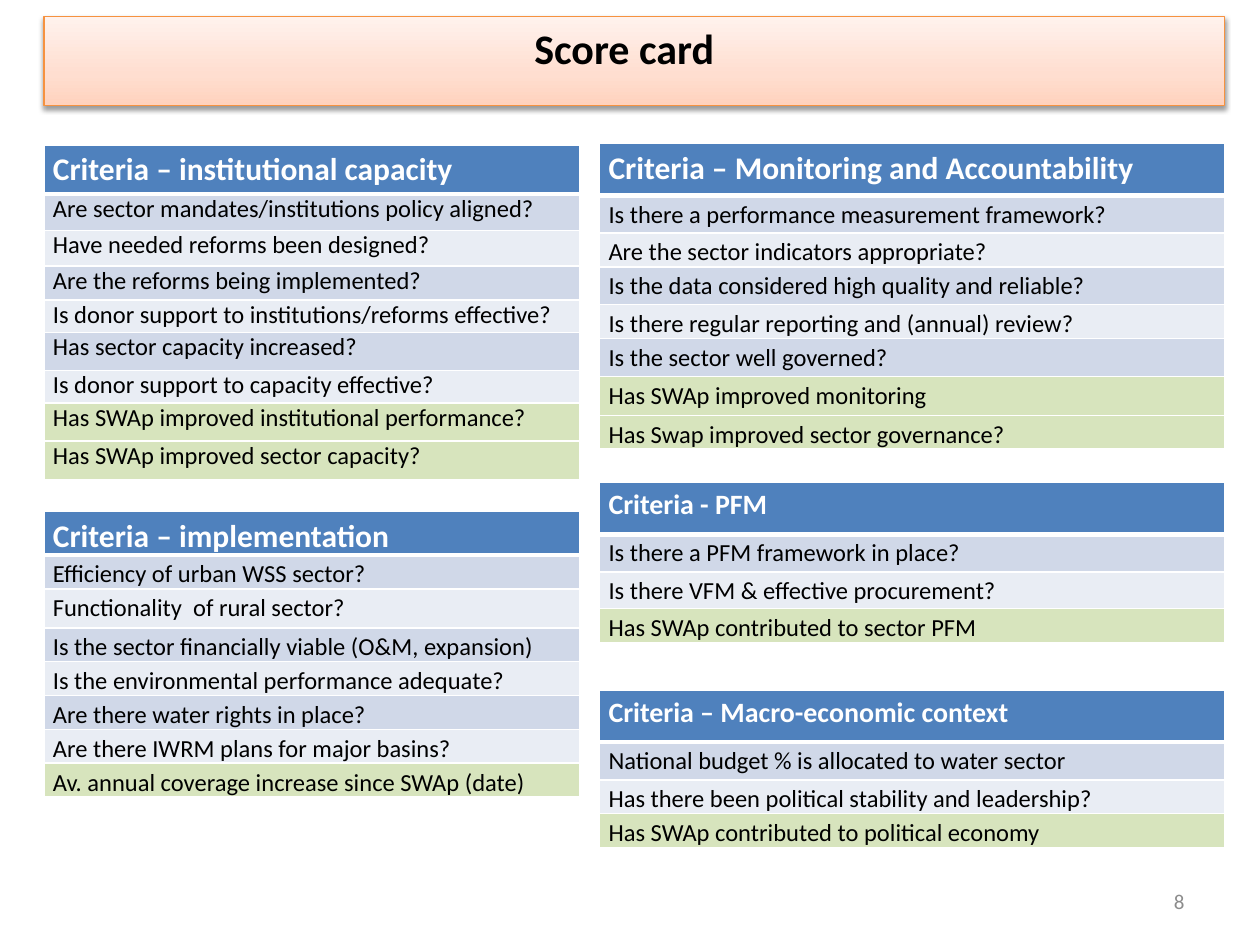
"""Build the sector score card slide."""
import dataclasses

import pptx
import pptx.dml.color
import pptx.enum.shapes
import pptx.enum.text
import pptx.oxml
import pptx.oxml.ns
import pptx.util

Inches = pptx.util.Inches


@dataclasses.dataclass(frozen=True)
class Theme:
    font: str = "Calibri"
    black: str = "000000"
    white: str = "FFFFFF"
    grey: str = "8C8C8C"
    header: str = "4F81BD"
    bands: tuple = ("D0D8E8", "E9EDF4")
    outcome: str = "D7E4BD"
    banner_line: str = "F69240"
    banner_stops: tuple = ((0, "FFD2BD"), (35, "FFDED0"), (100, "FFF2ED"))
    title_size: int = 24
    body_size: int = 14
    number_size: int = 12


@dataclasses.dataclass(frozen=True)
class Card:
    left: float
    top: float
    width: float
    heights: tuple
    heading: str
    questions: tuple
    outcomes: tuple
    heading_size: int = 18
    spacing: float = 1.15


THEME = Theme()
LEFT_COLUMN = (0.35, 4.25)
RIGHT_COLUMN = (4.76, 4.96)

CARDS = (
    Card(
        LEFT_COLUMN[0], 1.15, LEFT_COLUMN[1],
        (0.39, 0.29, 0.28, 0.27, 0.26, 0.3, 0.26, 0.3, 0.31),
        "Criteria – institutional capacity",
        ("Are sector mandates/institutions policy aligned?",
         "Have needed reforms been designed?",
         "Are the reforms being implemented?",
         "Is donor support to institutions/reforms effective?",
         "Has sector capacity increased?",
         "Is donor support to capacity effective?"),
        ("Has SWAp improved institutional performance?",
         "Has SWAp improved sector capacity?"),
        spacing=1.0,
    ),
    Card(
        RIGHT_COLUMN[0], 1.14, RIGHT_COLUMN[1],
        (0.41, 0.3, 0.24, 0.3, 0.24, 0.3, 0.31, 0.24),
        "Criteria – Monitoring and Accountability",
        ("Is there a performance measurement framework?",
         "Are the sector indicators appropriate?",
         "Is the data considered high quality and reliable?",
         "Is there regular reporting and (annual) review?",
         "Is the sector well governed?"),
        ("Has SWAp improved monitoring",
         "Has Swap improved sector governance?"),
    ),
    Card(
        LEFT_COLUMN[0], 4.06, LEFT_COLUMN[1],
        (0.33, 0.26, 0.31) + (0.26,) * 5,
        "Criteria – implementation",
        ("Efficiency of urban WSS sector?",
         "Functionality  of rural sector?",
         "Is the sector financially viable (O&M, expansion)",
         "Is the environmental performance adequate?",
         "Are there water rights in place?",
         "Are there IWRM plans for major basins?"),
        ("Av. annual coverage increase since SWAp (date)",),
    ),
    Card(
        RIGHT_COLUMN[0], 3.83, RIGHT_COLUMN[1], (0.41, 0.3, 0.29, 0.26),
        "Criteria - PFM",
        ("Is there a PFM framework in place?",
         "Is there VFM & effective procurement?"),
        ("Has SWAp contributed to sector PFM",),
        heading_size=16,
    ),
    Card(
        RIGHT_COLUMN[0], 5.48, RIGHT_COLUMN[1], (0.41, 0.3, 0.25, 0.24),
        "Criteria – Macro-economic context",
        ("National budget % is allocated to water sector",
         "Has there been political stability and leadership?"),
        ("Has SWAp contributed to political economy",),
        heading_size=16,
    ),
)


def rgb(color):
    return pptx.dml.color.RGBColor.from_string(color)


def parse_drawing(tag, attributes, content):
    namespace = pptx.oxml.ns.nsdecls("a")
    return pptx.oxml.parse_xml(f"<a:{tag} {namespace} {attributes}>{content}</a:{tag}>")


def add_run(paragraph, text, size, color, bold=False):
    run = paragraph.add_run()
    run.text = text
    run.font.name = THEME.font
    run.font.size = pptx.util.Pt(size)
    run.font.bold = bold
    run.font.color.rgb = rgb(color)


def add_banner(slide, text):
    shape = slide.shapes.add_shape(
        pptx.enum.shapes.MSO_SHAPE.RECTANGLE,
        Inches(0.35), Inches(0.13), Inches(9.37), Inches(0.71))
    shape.fill.gradient()
    shape.fill.gradient_angle = 90
    stops = shape._element.spPr.find(".//" + pptx.oxml.ns.qn("a:gsLst"))
    for stop in list(stops):
        stops.remove(stop)
    for position, color in THEME.banner_stops:
        stops.append(parse_drawing("gs", f'pos="{position * 1000}"', f'<a:srgbClr val="{color}"/>'))
    shape.line.color.rgb = rgb(THEME.banner_line)
    shape.line.width = pptx.util.Pt(0.75)
    shape.shadow.inherit = False
    effects = shape._element.spPr.find(pptx.oxml.ns.qn("a:effectLst"))
    effects.append(parse_drawing(
        "outerShdw", 'blurRad="39370" dist="20320" dir="5400000" rotWithShape="0"',
        f'<a:srgbClr val="{THEME.black}"><a:alpha val="38000"/></a:srgbClr>'))
    frame = shape.text_frame
    frame.word_wrap = True
    frame.vertical_anchor = pptx.enum.text.MSO_ANCHOR.TOP
    frame.margin_right = Inches(0.26)
    paragraph = frame.paragraphs[0]
    paragraph.alignment = pptx.enum.text.PP_ALIGN.CENTER
    add_run(paragraph, text, THEME.title_size, THEME.black, bold=True)


def set_borders(cell, top=1, bottom=1):
    properties = cell._tc.get_or_add_tcPr()
    sides = (("lnL", 1), ("lnR", 1), ("lnT", top), ("lnB", bottom))
    for index, (tag, points) in enumerate(sides):
        properties.insert(index, parse_drawing(
            tag, f'w="{pptx.util.Pt(points)}"',
            f'<a:solidFill><a:srgbClr val="{THEME.white}"/></a:solidFill>'))


def fill_cell(cell, text, fill, size, color, spacing, bold=False):
    cell.fill.solid()
    cell.fill.fore_color.rgb = rgb(fill)
    cell.margin_left = cell.margin_right = Inches(0.07)
    cell.margin_top = cell.margin_bottom = 0
    paragraph = cell.text_frame.paragraphs[0]
    paragraph.line_spacing = spacing
    properties = paragraph._p.get_or_add_pPr()
    properties.set("marL", str(Inches(0.38)))
    properties.set("indent", str(-Inches(0.38)))
    add_run(paragraph, text, size, color, bold)


def add_card(slide, card):
    rows = card.questions + card.outcomes
    table = slide.shapes.add_table(
        len(rows) + 1, 1, Inches(card.left), Inches(card.top),
        Inches(card.width), Inches(sum(card.heights))).table
    for row, height in zip(table.rows, card.heights):
        row.height = Inches(height)
    heading = table.cell(0, 0)
    fill_cell(heading, card.heading, THEME.header, card.heading_size, THEME.white, 1.15, bold=True)
    set_borders(heading, bottom=3)
    for index, text in enumerate(rows):
        cell = table.cell(index + 1, 0)
        is_question = index < len(card.questions)
        fill = THEME.bands[index % 2] if is_question else THEME.outcome
        fill_cell(cell, text, fill, THEME.body_size, THEME.black, card.spacing)
        set_borders(cell, top=3 if index == 0 else 1)


def add_slide_number(slide, text):
    frame = slide.shapes.add_textbox(
        Inches(7.17), Inches(6.95), Inches(2.33), Inches(0.4)).text_frame
    frame.word_wrap = True
    frame.vertical_anchor = pptx.enum.text.MSO_ANCHOR.MIDDLE
    paragraph = frame.paragraphs[0]
    paragraph.alignment = pptx.enum.text.PP_ALIGN.RIGHT
    add_run(paragraph, text, THEME.number_size, THEME.grey)


def main():
    presentation = pptx.Presentation()
    presentation.slide_width = Inches(10)
    presentation.slide_height = Inches(7.5)
    slide = presentation.slides.add_slide(presentation.slide_layouts[6])
    add_slide_number(slide, "8")
    add_banner(slide, "Score card")
    for card in CARDS:
        add_card(slide, card)
    presentation.save("out.pptx")


if __name__ == "__main__":
    main()
